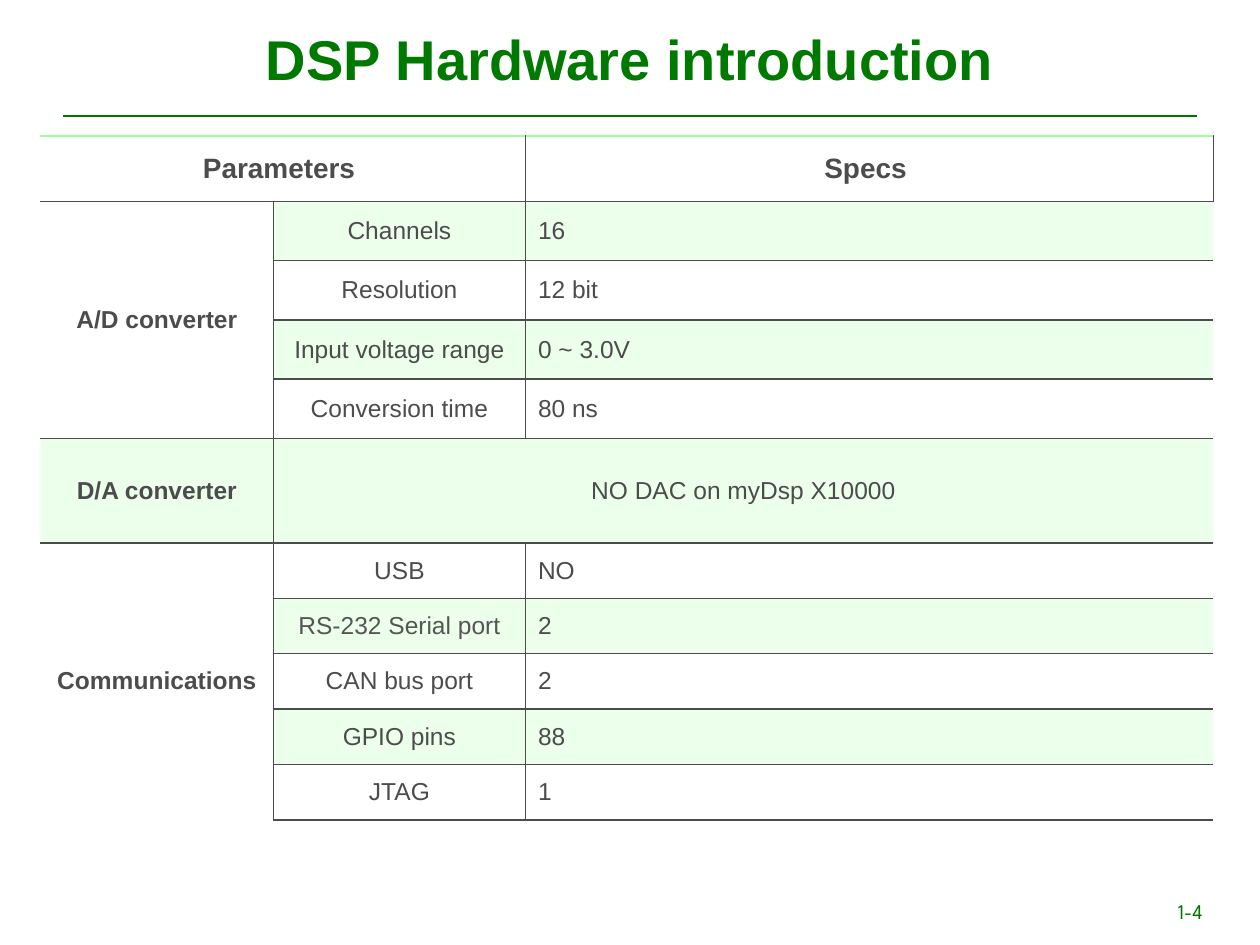
from lxml.etree import SubElement
from pptx import Presentation
from pptx.dml.color import RGBColor
from pptx.enum.shapes import MSO_CONNECTOR as Connector
from pptx.enum.text import MSO_ANCHOR as Anchor, PP_ALIGN as Align
from pptx.oxml.ns import qn
from pptx.util import Inches, Pt

DARK_GREEN = RGBColor(0x00, 0x79, 0x00)
RULE_GREEN = RGBColor(0x00, 0x76, 0x00)
LIGHT_GREEN = RGBColor(0x9F, 0xFF, 0x9F)
GRAY = RGBColor(0x4C, 0x4C, 0x4C)
SOFT_GRAY = RGBColor(0x55, 0x55, 0x55)

PLAIN_TABLE_STYLE = "{2D5ABB26-0587-4C30-8999-92F81FD0307C}"
COLUMN_WIDTHS = [1.85, 2, 5.46]
ROW_HEIGHTS = [0.52] + [0.47] * 4 + [0.83] + [0.44] * 5
ROWS = [
    ("Parameters ", "", "Specs "),
    ("A/D converter", "Channels", "16"),
    ("", "Resolution", "12 bit"),
    ("", "Input voltage range", "0 ~ 3.0V"),
    ("", "Conversion time", "80 ns"),
    ("D/A converter", "NO DAC on myDsp X10000", ""),
    ("Communications", "USB", "NO"),
    ("", "RS-232 Serial port", "2"),
    ("", "CAN bus port", "2"),
    ("", "GPIO pins", "88"),
    ("", "JTAG", "1"),
]
# First and last cell of each merged area, as (row, column)
MERGES = [((0, 0), (0, 1)), ((1, 0), (4, 0)), ((5, 1), (5, 2)), ((6, 0), (10, 0))]


def write(frame, text, align, **font):
    para = frame.paragraphs[0]
    para.alignment = align
    span = para.add_run()
    span.text = text
    color = font.pop("color")
    for name, value in font.items():
        setattr(span.font, name, value)
    span.font.color.rgb = color


def add_text(page, area, text, align, anchor, **font):
    box = page.shapes.add_textbox(*map(Inches, area))
    frame = box.text_frame
    frame.word_wrap = True
    frame.vertical_anchor = anchor
    write(frame, text, align, **font)


def add_rule(page, left, right, top):
    rule = page.shapes.add_connector(
        Connector.STRAIGHT, Inches(left), Inches(top), Inches(right), Inches(top))
    rule.line.color.rgb = RULE_GREEN
    rule.line.width = Pt(0.75)
    SubElement(rule._element.spPr, qn("a:effectLst"))


def area_of(row, column):
    """Return the first cell of the merged area that holds this cell."""
    for first, last in MERGES:
        if first[0] <= row <= last[0] and first[1] <= column <= last[1]:
            return first
    return row, column


def add_borders(cell, row, column):
    """Line every edge between two areas, leaving the outer sides open."""
    neighbours = {
        "lnL": (row, column - 1), "lnR": (row, column + 1),
        "lnT": (row - 1, column), "lnB": (row + 1, column),
    }
    properties = cell._tc.get_or_add_tcPr()
    for tag, (next_row, next_column) in neighbours.items():
        outer_side = not 0 <= next_column < len(COLUMN_WIDTHS)
        if outer_side or area_of(next_row, next_column) == area_of(row, column):
            continue
        color = LIGHT_GREEN if next_row < 0 else GRAY
        line = SubElement(properties, qn(f"a:{tag}"), w=str(Pt(1)))
        fill = SubElement(line, qn("a:solidFill"))
        SubElement(fill, qn("a:srgbClr"), val=str(color))


def tint(cell):
    cell.fill.solid()
    cell.fill.fore_color.rgb = LIGHT_GREEN
    color = cell._tc.tcPr.find(f"{qn('a:solidFill')}/{qn('a:srgbClr')}")
    SubElement(color, qn("a:alpha"), val="20000")


def fill_cell(cell, row, column, text):
    cell.vertical_anchor = Anchor.MIDDLE
    add_borders(cell, row, column)
    in_tall_area = column == 0 and row != 5
    if row % 2 and not in_tall_area:
        tint(cell)
    else:
        cell.fill.background()
    if text:
        is_value = row > 0 and column == 2
        write(cell.text_frame, text, Align.LEFT if is_value else Align.CENTER,
              name="Arial", size=Pt(14 if row else 16),
              bold=row == 0 or column == 0,
              color=SOFT_GRAY if text.startswith("RS-232") else GRAY)


def add_spec_table(page):
    frame = page.shapes.add_table(
        len(ROWS), len(COLUMN_WIDTHS), Inches(0.32), Inches(1.08),
        Inches(sum(COLUMN_WIDTHS)), Inches(sum(ROW_HEIGHTS)))
    table = frame.table
    table.first_row = table.horz_banding = False
    table._tbl.tblPr.find(qn("a:tableStyleId")).text = PLAIN_TABLE_STYLE
    for column, width in zip(table.columns, COLUMN_WIDTHS):
        column.width = Inches(width)
    for row, height in zip(table.rows, ROW_HEIGHTS):
        row.height = Inches(height)
    for first, last in MERGES:
        table.cell(*first).merge(table.cell(*last))
    for row, texts in enumerate(ROWS):
        for column, text in enumerate(texts):
            fill_cell(table.cell(row, column), row, column, text)


def main():
    deck = Presentation()
    deck.slide_width, deck.slide_height = Inches(10), Inches(7.5)
    page = deck.slides.add_slide(deck.slide_layouts[6])
    add_rule(page, 0.5, 9.5, 0.92)
    add_text(page, (0.5, 0, 9, 0.92), "DSP Hardware introduction",
             Align.CENTER, Anchor.MIDDLE,
             name="Arial", size=Pt(32), bold=True, color=DARK_GREEN)
    add_text(page, (9.25, 7.08, 0.67, 0.33), "1-4", Align.LEFT, Anchor.TOP,
             name="League Spartan", size=Pt(12), color=DARK_GREEN)
    add_spec_table(page)
    deck.save("out.pptx")


if __name__ == "__main__":
    main()
